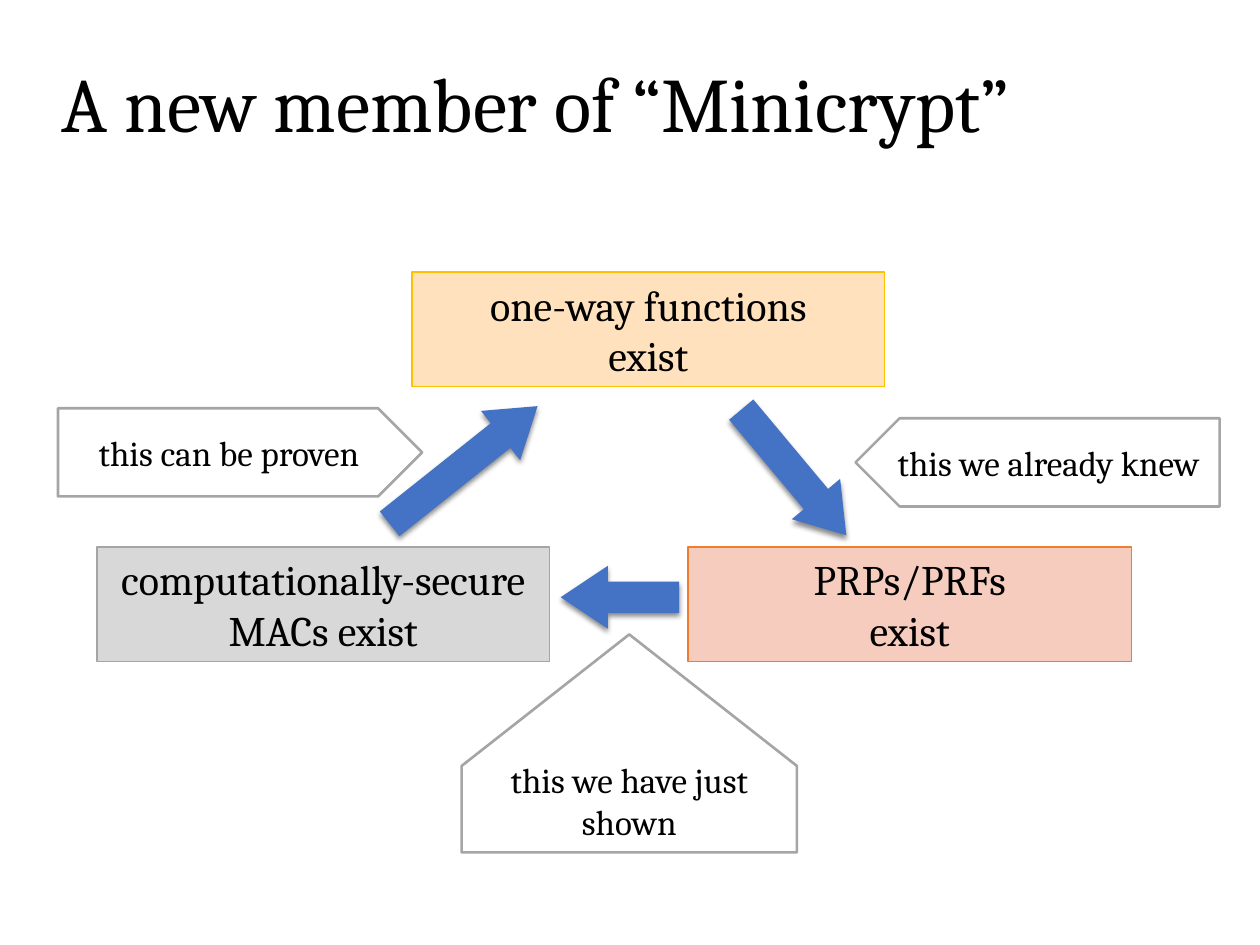
from pptx import Presentation
from pptx.dml.color import RGBColor
from pptx.enum.shapes import MSO_SHAPE
from pptx.enum.text import MSO_ANCHOR, PP_ALIGN
from pptx.oxml import parse_xml
from pptx.oxml.ns import nsdecls
from pptx.util import Inches, Pt

COLORS = {
    "text": "000000", "white": "FFFFFF", "arrow": "4472C4",
    "gray": "D8D8D8", "gray_line": "A5A5A5",
    "red": "F6CCBE", "red_line": "ED7D31",
    "yellow": "FFE2BD", "yellow_line": "FFC000",
}
FONT = "Cambria"
BOX_HEIGHT = 0.91
SHADOW = (
    f'<a:effectLst {nsdecls("a")}>'
    '<a:outerShdw blurRad="38100" dist="25400" dir="5400000" rotWithShape="0">'
    '<a:srgbClr val="000000"><a:alpha val="45000"/></a:srgbClr>'
    '</a:outerShdw></a:effectLst>'
)


def color(name):
    return RGBColor.from_string(COLORS[name])


class DiagramSlide:
    def __init__(self, slide):
        self.slide = slide

    def shape(self, kind, bounds, fill, line=None, width=0.79):
        shape = self.slide.shapes.add_shape(kind, *map(Inches, bounds))
        shape.shadow.inherit = False
        shape.fill.solid()
        shape.fill.fore_color.rgb = color(fill)
        if line:
            shape.line.color.rgb = color(line)
            shape.line.width = Pt(width)
        else:
            shape.line.fill.background()
        return shape

    def add_lines(self, shape, lines, size, align=PP_ALIGN.CENTER):
        frame = shape.text_frame
        frame.word_wrap = True
        frame.vertical_anchor = MSO_ANCHOR.MIDDLE
        for index, text in enumerate(lines):
            paragraph = frame.add_paragraph() if index else frame.paragraphs[0]
            paragraph.alignment = align
            run = paragraph.add_run()
            run.text = text
            run.font.name = FONT
            run.font.size = Pt(size)
            run.font.color.rgb = color("text")
        return frame

    def title(self, text, bounds):
        box = self.slide.shapes.add_textbox(*map(Inches, bounds))
        frame = self.add_lines(box, [text], 44, PP_ALIGN.LEFT)
        frame.paragraphs[0].line_spacing = 0.9

    def statement(self, lines, left, top, width, name):
        bounds = (left, top, width, BOX_HEIGHT)
        shape = self.shape(MSO_SHAPE.RECTANGLE, bounds, name, f"{name}_line")
        self.add_lines(shape, lines, 24)

    def arrow(self, left, top, length, rotation):
        shape = self.shape(MSO_SHAPE.RIGHT_ARROW, (left, top, length, 0.5), "arrow")
        shape.adjustments[1] = 0.75
        shape.rotation = rotation
        properties = shape._element.spPr
        properties.replace(properties.find("{*}effectLst"), parse_xml(SHADOW))

    def callout(self, text, bounds, flipped=False):
        shape = self.shape(MSO_SHAPE.PENTAGON, bounds, "white", "gray_line", 1.5)
        if flipped:
            shape._element.spPr.xfrm.set("flipH", "1")
        self.add_lines(shape, [text], 20)
        return shape

    def upward_callout(self, text, bounds):
        shape = self.callout(text, bounds, flipped=True)
        shape.rotation = 90
        shape.adjustments[0] = 0.603
        # Keep the text upright and below the tip
        shape.text_frame._txBody.bodyPr.set("vert", "vert270")
        shape.text_frame.margin_left = Inches(0.43)


def main():
    presentation = Presentation()
    presentation.slide_width = Inches(10)
    presentation.slide_height = Inches(7.5)
    diagram = DiagramSlide(presentation.slides.add_slide(presentation.slide_layouts[6]))

    diagram.title("A new member of “Minicrypt”", (0.39, 0.23, 7.97, 1.25))

    # Equivalent statements
    diagram.statement(["computationally-secure", "MACs exist"], 0.77, 4.34, 3.59, "gray")
    diagram.statement(["PRPs/PRFs", "exist"], 5.46, 4.34, 3.52, "red")
    diagram.statement(["one-way functions", "exist"], 3.27, 2.16, 3.75, "yellow")

    # Implications
    diagram.arrow(2.93, 3.44, 1.5, 321.5)
    diagram.arrow(4.45, 4.49, 0.94, 180)
    diagram.arrow(5.65, 3.5, 1.3, 50.1)

    # Remarks on the implications
    diagram.callout("this we already knew", (6.79, 3.32, 2.89, 0.7), flipped=True)
    diagram.upward_callout("this we have just shown", (4.13, 4.57, 1.73, 2.66))
    diagram.callout("this can be proven", (0.46, 3.24, 2.89, 0.7))

    presentation.save("out.pptx")


if __name__ == "__main__":
    main()
